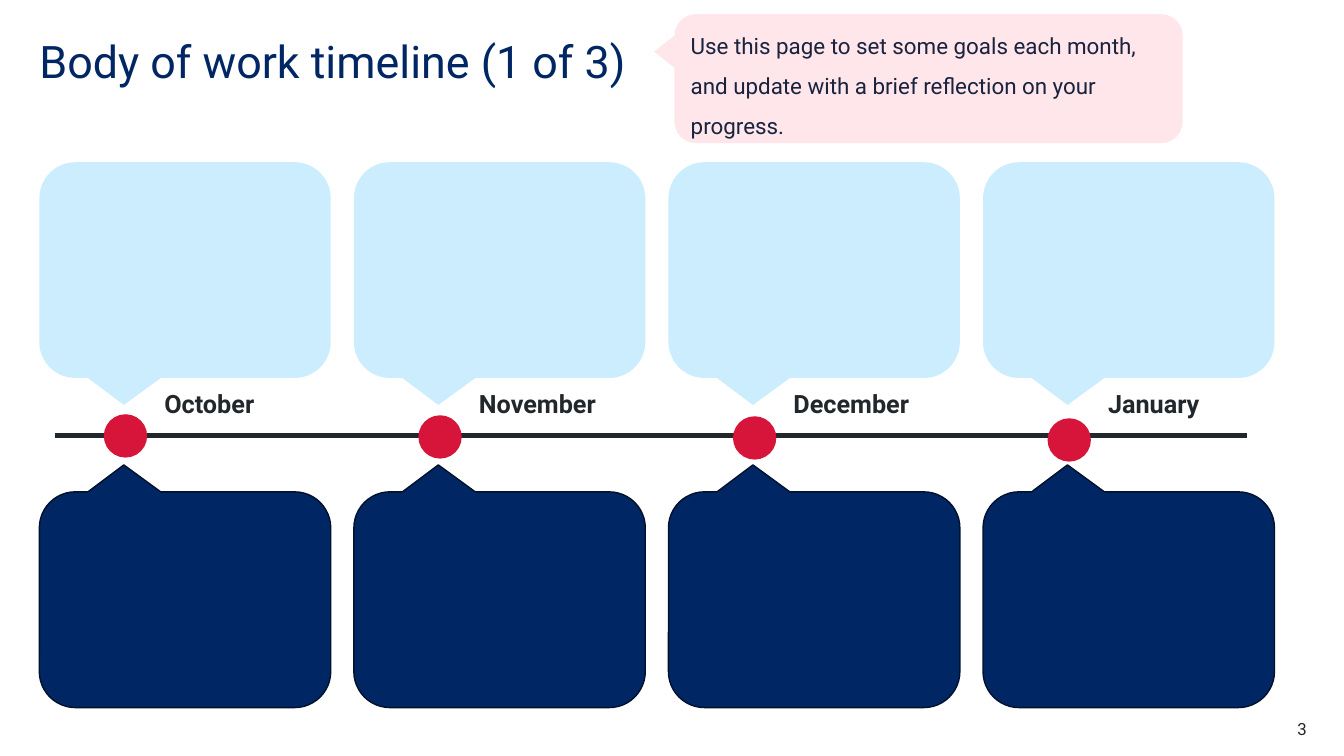
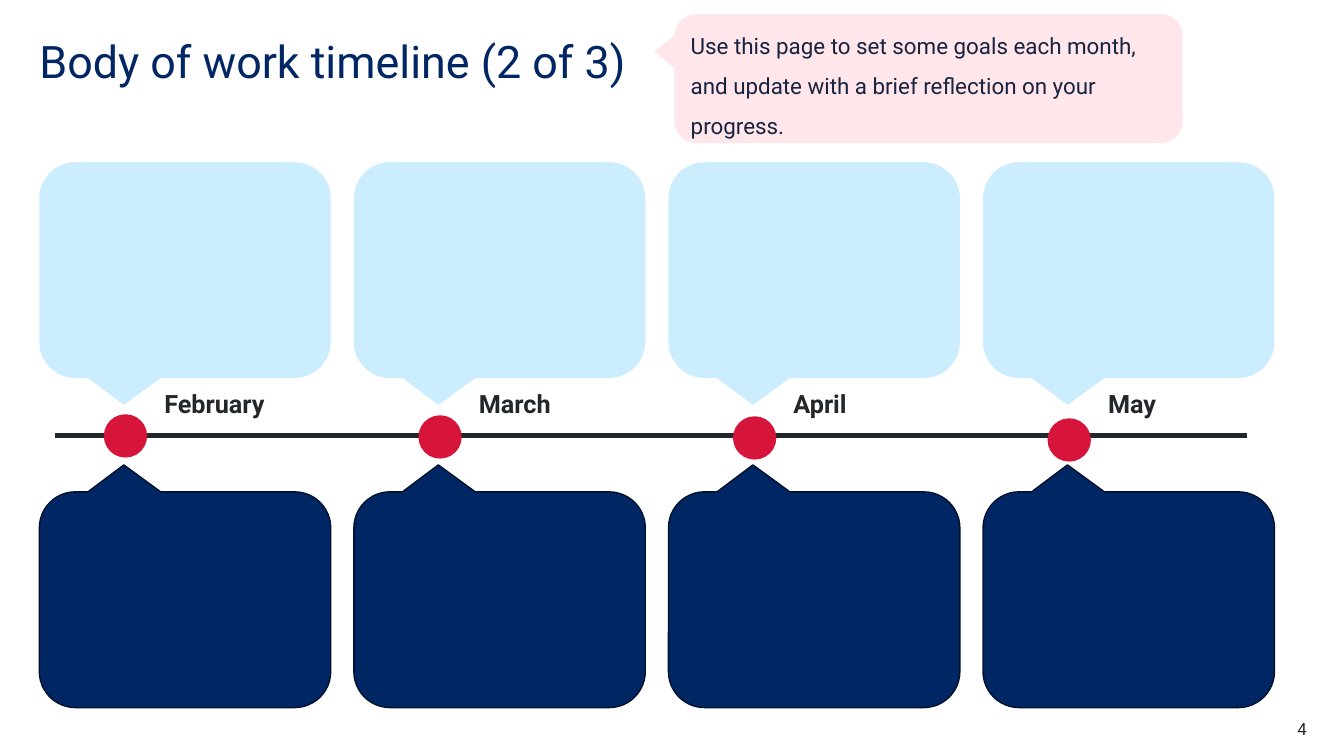
from dataclasses import dataclass

from lxml import etree
from pptx import Presentation
from pptx.dml.color import RGBColor
from pptx.enum import shapes, text
from pptx.oxml import ns
from pptx.util import Inches, Pt


@dataclass(frozen=True)
class Theme:
    font: str = "Roboto"
    navy: str = "002664"
    navy_edge: str = "00112C"
    sky: str = "CBEDFD"
    pink: str = "FFE6EA"
    red: str = "D7153A"
    ink: str = "22272B"
    hint_ink: str = "19233E"
    title_size: int = 32
    month_size: int = 18
    hint_size: int = 16
    number_size: int = 12


@dataclass(frozen=True)
class Box:
    left: float
    top: float
    width: float
    height: float

    def lengths(self) -> tuple:
        return tuple(Inches(v) for v in (self.left, self.top, self.width, self.height))


@dataclass(frozen=True)
class TimelinePage:
    title: str
    number: int
    months: tuple[str, ...]


THEME = Theme()
MARGIN = 0.39
COLUMN_STEP = 3.12
PANEL_WIDTH, PANEL_HEIGHT = 2.89, 2.14
GOALS_TOP, REFLECTIONS_TOP = 1.61, 4.88
TAIL_X, TAIL_Y, CORNER = -0.21, 0.625, 0.167
AXIS_Y, AXIS_START, AXIS_END = 4.32, 0.55, 12.37
DOT_LEFT, DOT_SIZE = 1.03, 0.43
DOT_TOPS = (4.11, 4.12, 4.13, 4.15)
HINT = ("Use this page to set some goals each month, and update with a "
        "brief reflection on your progress.")
PAGES = (
    TimelinePage("Body of work timeline (1 of 3)", 3,
                 ("October", "November", "December", "January")),
    TimelinePage("Body of work timeline (2 of 3)", 4,
                 ("February", "March", "April", "May")),
)


def write(shape, content: str, *, size: int, color: str, bold: bool = False,
          align=text.PP_ALIGN.LEFT, anchor=text.MSO_ANCHOR.TOP,
          spacing: float = 1.0, inset: float | None = 0) -> None:
    """Fill a shape with one formatted paragraph; inset None keeps the default."""
    tf = shape.text_frame
    tf.word_wrap = True
    tf.auto_size = text.MSO_AUTO_SIZE.NONE
    tf.vertical_anchor = anchor
    if inset is not None:
        tf.margin_left = tf.margin_top = tf.margin_right = tf.margin_bottom = Inches(inset)
    p = tf.paragraphs[0]
    p.alignment = align
    p.line_spacing = spacing
    r = p.add_run()
    r.text = content
    r.font.name = THEME.font
    r.font.size = Pt(size)
    r.font.bold = bold
    r.font.color.rgb = RGBColor.from_string(color)


def add_filled(parent, kind, box: Box, fill: str, edge: str | None = None):
    sp = parent.add_shape(kind, *box.lengths())
    sp.shadow.inherit = False
    sp.fill.solid()
    sp.fill.fore_color.rgb = RGBColor.from_string(fill)
    if edge:
        sp.line.color.rgb = RGBColor.from_string(edge)
        sp.line.width = Pt(1)
    else:
        sp.line.fill.background()
    return sp


def add_callout(s, box: Box, tail: tuple[float, float], fill: str,
                edge: str | None = None):
    """Add a rounded callout; tail is its tip as a share of the size from the centre."""
    sp = add_filled(s.shapes, shapes.MSO_SHAPE.ROUNDED_RECTANGULAR_CALLOUT, box, fill, edge)
    for i, value in enumerate((*tail, CORNER)):
        sp.adjustments[i] = value
    return sp


def add_text(s, box: Box, content: str, **style) -> None:
    write(s.shapes.add_textbox(*box.lengths()), content, **style)


def add_panels(s, count: int) -> None:
    rows = ((GOALS_TOP, TAIL_Y, THEME.sky, None),
            (REFLECTIONS_TOP, -TAIL_Y, THEME.navy, THEME.navy_edge))
    for top, tail_y, fill, edge in rows:
        for i in range(count):
            box = Box(MARGIN + i * COLUMN_STEP, top, PANEL_WIDTH, PANEL_HEIGHT)
            add_callout(s, box, (TAIL_X, tail_y), fill, edge)


def add_heading(s, heading: str) -> None:
    title = s.shapes.title
    title.left, title.top, title.width, title.height = Box(MARGIN, 0.39, 11.02, 0.6).lengths()
    write(title, heading, size=THEME.title_size, color=THEME.navy, spacing=0.9)
    hint = add_callout(s, Box(6.69, 0.14, 5.04, 1.28), (-0.54, -0.21), THEME.pink)
    write(hint, HINT, size=THEME.hint_size, color=THEME.hint_ink, spacing=1.5,
          anchor=text.MSO_ANCHOR.MIDDLE, inset=None)


def add_axis(s) -> None:
    group = s.shapes.add_group_shape().shapes
    line = group.add_connector(shapes.MSO_CONNECTOR.STRAIGHT, Inches(AXIS_START),
                               Inches(AXIS_Y), Inches(AXIS_END), Inches(AXIS_Y))
    line.line.color.rgb = RGBColor.from_string(THEME.ink)
    line.line.width = Pt(3)
    etree.SubElement(line._element.spPr, ns.qn("a:effectLst"))
    for i, top in enumerate(DOT_TOPS):
        box = Box(DOT_LEFT + i * COLUMN_STEP, top, DOT_SIZE, DOT_SIZE)
        add_filled(group, shapes.MSO_SHAPE.OVAL, box, THEME.red)


def add_timeline(prs, page: TimelinePage) -> None:
    s = prs.slides.add_slide(prs.slide_layouts.get_by_name("Title Only"))
    add_panels(s, len(page.months))
    add_heading(s, page.title)
    for i, month in enumerate(page.months):
        add_text(s, Box(1.63 + i * COLUMN_STEP, 3.85, 1.5, 0.4), month,
                 size=THEME.month_size, color=THEME.ink, bold=True)
    add_axis(s)
    add_text(s, Box(12.17, 7.13, 0.79, 0.2), str(page.number),
             size=THEME.number_size, color=THEME.ink, align=text.PP_ALIGN.RIGHT)


def main() -> None:
    prs = Presentation()
    prs.slide_width, prs.slide_height = Inches(13.33), Inches(7.5)
    for page in PAGES:
        add_timeline(prs, page)
    prs.save("out.pptx")


if __name__ == "__main__":
    main()
